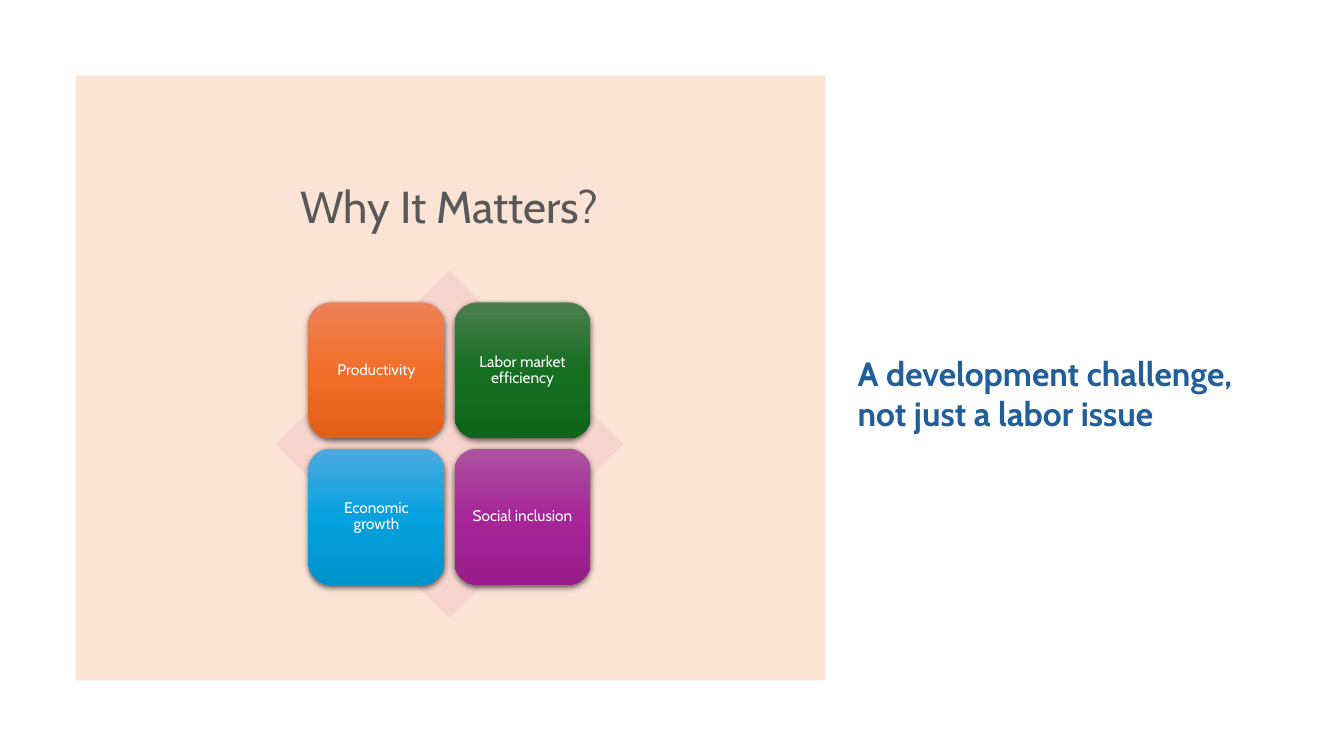
"""Builds the "Why It Matters?" slide with a four-tile matrix."""
from dataclasses import dataclass

from lxml import etree
from pptx import Presentation
from pptx.dml.color import RGBColor
from pptx.enum import shapes, text
from pptx.oxml.ns import qn
from pptx.util import Pt


@dataclass(frozen=True)
class Theme:
    """Font, type sizes and colours of the slide."""
    font: str = "Cabin"
    title_size: int = 32
    tagline_size: int = 24
    tile_size: int = 11
    panel: str = "FBE3D6"
    diamond: str = "F7D5CE"
    title: str = "595959"
    tagline: str = "215F9A"
    tile_text: str = "FFFFFF"
    shadow: str = "000000"
    orange: tuple = ("ED8257", "F26E29", "E25F1A")
    green: tuple = ("4D7E50", "156F21", "0F661B")
    blue: tuple = ("4CAADF", "05A2DF", "0092CB")
    purple: tuple = ("AC53A0", "A62598", "991C8B")


THEME = Theme()
TILES = (
    ("Productivity", THEME.orange),
    ("Labor market efficiency", THEME.green),
    ("Economic growth", THEME.blue),
    ("Social inclusion", THEME.purple),
)
TILE_LEFT, TILE_TOP = 220.3, 216
TILE_SIDE, TILE_PITCH = 97.2, 104.4


def write_text(shape, wording, size, color, align, anchor, spacing=1.0, bold=False):
    """Put one formatted paragraph into a shape."""
    frame = shape.text_frame
    frame.word_wrap = True
    frame.vertical_anchor = anchor
    frame.text = wording
    paragraph = frame.paragraphs[0]
    paragraph.alignment = align
    paragraph.line_spacing = spacing
    font = paragraph.runs[0].font
    font.name, font.size, font.bold = THEME.font, Pt(size), bold
    font.color.rgb = RGBColor.from_string(color)


def add_plain_shape(slide, kind, left, top, width, height):
    """Add a preset shape without outline or shadow."""
    shape = slide.shapes.add_shape(kind, Pt(left), Pt(top), Pt(width), Pt(height))
    shape.line.fill.background()
    shape.shadow.inherit = False
    return shape


def add_solid_shape(slide, kind, left, top, width, height, color):
    """Add a plain shape with one fill colour."""
    shape = add_plain_shape(slide, kind, left, top, width, height)
    shape.fill.solid()
    shape.fill.fore_color.rgb = RGBColor.from_string(color)


def add_text_box(slide, left, top, width, height, *content, **options):
    """Add a text box holding one paragraph."""
    box = slide.shapes.add_textbox(Pt(left), Pt(top), Pt(width), Pt(height))
    write_text(box, *content, **options)


def add_color(parent, color):
    """Append an RGB colour element and return it."""
    return etree.SubElement(parent, qn("a:srgbClr"), val=color)


def fill_gradient(shape, colors):
    """Fill a shape downwards with three evenly spaced colours."""
    shape.fill.gradient()
    shape.fill.gradient_angle = 270
    stops = shape.element.spPr.find(".//" + qn("a:gsLst"))
    for stop in list(stops):
        stops.remove(stop)
    for index, color in enumerate(colors):
        add_color(etree.SubElement(stops, qn("a:gs"), pos=str(index * 50000)), color)


def add_drop_shadow(shape):
    """Give a shape a soft shadow below it."""
    effects = shape.element.spPr.find(qn("a:effectLst"))
    shadow = etree.SubElement(
        effects, qn("a:outerShdw"), blurRad=str(Pt(4.5)), dist=str(Pt(1.5)),
        dir="5400000", algn="ctr", rotWithShape="0")
    etree.SubElement(add_color(shadow, THEME.shadow), qn("a:alpha"), val="63000")


def add_tile(slide, index, label, colors):
    """Add one labelled tile at its place in the two-by-two grid."""
    row, column = divmod(index, 2)
    tile = add_plain_shape(
        slide, shapes.MSO_SHAPE.ROUNDED_RECTANGLE, TILE_LEFT + column * TILE_PITCH,
        TILE_TOP + row * TILE_PITCH, TILE_SIDE, TILE_SIDE)
    fill_gradient(tile, colors)
    add_drop_shadow(tile)
    frame = tile.text_frame
    frame.margin_left = frame.margin_right = Pt(3.6)
    frame.margin_top = frame.margin_bottom = Pt(3.6)
    write_text(tile, label, THEME.tile_size, THEME.tile_text,
               text.PP_ALIGN.CENTER, text.MSO_ANCHOR.MIDDLE, spacing=0.9)


def main():
    """Build and save the slide."""
    presentation = Presentation()
    presentation.slide_width, presentation.slide_height = Pt(960), Pt(540)
    slide = presentation.slides.add_slide(presentation.slide_layouts[6])

    add_solid_shape(slide, shapes.MSO_SHAPE.RECTANGLE, 54, 54, 535.7, 432, THEME.panel)
    add_text_box(slide, 99.4, 83.5, 442.8, 86.4, "Why It Matters?",
                 THEME.title_size, THEME.title, text.PP_ALIGN.CENTER,
                 text.MSO_ANCHOR.BOTTOM, spacing=0.9)
    add_text_box(slide, 605.5, 248.4, 301, 65.5,
                 "A development challenge, not just a labor issue",
                 THEME.tagline_size, THEME.tagline, text.PP_ALIGN.LEFT,
                 text.MSO_ANCHOR.TOP, bold=True)
    add_solid_shape(slide, shapes.MSO_SHAPE.DIAMOND, 196.6, 193, 248.4, 248.4, THEME.diamond)
    for index, (label, colors) in enumerate(TILES):
        add_tile(slide, index, label, colors)

    presentation.save("out.pptx")


if __name__ == "__main__":
    main()
